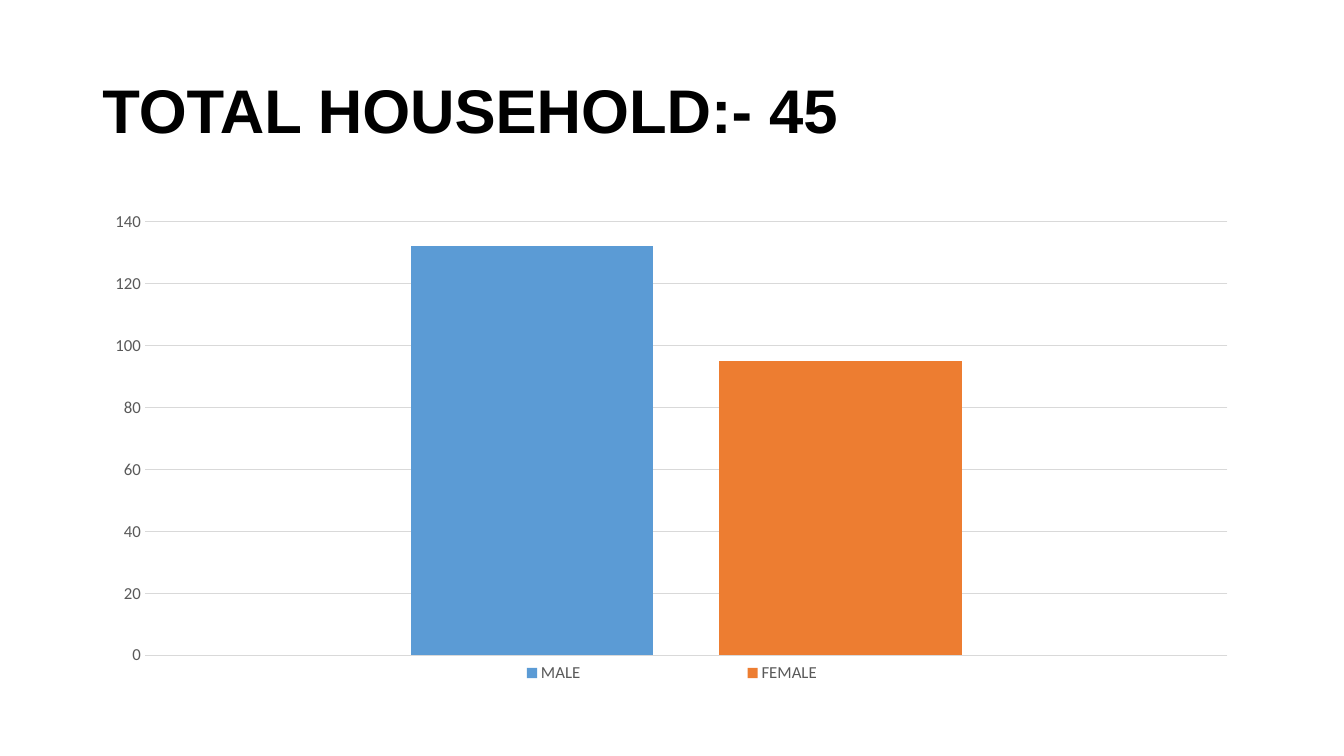
import lxml.etree
import pptx
import pptx.chart.data
import pptx.dml.color
import pptx.enum.chart
import pptx.enum.text
import pptx.oxml
import pptx.oxml.ns
import pptx.util

EMU_PER_PX = 9525
SLIDE_WIDTH, SLIDE_HEIGHT = 1280, 720
MARGIN = 88
CONTENT_WIDTH = SLIDE_WIDTH - 2 * MARGIN
CHART_TOP, CHART_HEIGHT = 192, 486
PLOT_BOX = (50, 19, 1031, 413)
LEGEND_BOX = (260, 434, 584, 30)

BLACK = pptx.dml.color.RGBColor(0x00, 0x00, 0x00)
LABEL_GREY = pptx.dml.color.RGBColor(0x59, 0x59, 0x59)
GRID_GREY = pptx.dml.color.RGBColor(0xD9, 0xD9, 0xD9)
BLUE = pptx.dml.color.RGBColor(0x5B, 0x9B, 0xD5)
ORANGE = pptx.dml.color.RGBColor(0xED, 0x7D, 0x31)
GREY = pptx.dml.color.RGBColor(0xA5, 0xA5, 0xA5)

HOUSEHOLD_MEMBERS = [
    ("MALE", [132], BLUE),
    ("FEMALE", [95], ORANGE),
    ("Series 3", [], GREY),
]


def px(length):
    return pptx.util.Emu(length * EMU_PER_PX)


def style_font(font, name, size, color, bold=False):
    font.name = name
    font.size = pptx.util.Pt(size)
    font.color.rgb = color
    font.bold = bold


def add_title(slide, wording, top, height):
    title = slide.shapes.add_textbox(px(MARGIN), px(top), px(CONTENT_WIDTH), px(height))
    frame = title.text_frame
    frame.word_wrap = True
    frame.vertical_anchor = pptx.enum.text.MSO_ANCHOR.MIDDLE
    frame.text = wording
    heading = frame.paragraphs[0]
    heading.line_spacing = 0.9
    style_font(heading.runs[0].font, "Arial", 44, BLACK, bold=True)


def add_value(parent, tag, value):
    lxml.etree.SubElement(parent, pptx.oxml.ns.qn(tag)).set("val", str(value))


def place_in_chart(part, box, inner=False):
    for previous in part.findall(pptx.oxml.ns.qn("c:layout")):
        part.remove(previous)
    layout = pptx.oxml.parse_xml(
        f'<c:layout {pptx.oxml.ns.nsdecls("c")}><c:manualLayout/></c:layout>'
    )
    manual = layout[0]
    if inner:
        add_value(manual, "c:layoutTarget", "inner")
    add_value(manual, "c:xMode", "edge")
    add_value(manual, "c:yMode", "edge")
    extents = (CONTENT_WIDTH, CHART_HEIGHT) * 2
    for side, length, extent in zip("xywh", box, extents):
        add_value(manual, f"c:{side}", length / extent)
    return layout


def style_axes(chart):
    chart.category_axis.visible = False
    count_axis = chart.value_axis
    count_axis.minimum_scale = 0
    count_axis.maximum_scale = 140
    count_axis.major_unit = 20
    count_axis.major_tick_mark = pptx.enum.chart.XL_TICK_MARK.NONE
    count_axis.minor_tick_mark = pptx.enum.chart.XL_TICK_MARK.NONE
    count_axis.format.line.fill.background()
    style_font(count_axis.tick_labels.font, "Calibri", 12, LABEL_GREY)
    gridline = count_axis.major_gridlines.format.line
    gridline.color.rgb = GRID_GREY
    gridline.width = pptx.util.Pt(0.75)


def add_legend(chart, members):
    chart.has_legend = True
    legend = chart.legend
    legend.position = pptx.enum.chart.XL_LEGEND_POSITION.BOTTOM
    legend.include_in_layout = False
    style_font(legend.font, "Calibri", 12, LABEL_GREY)
    layout = place_in_chart(legend._element, LEGEND_BOX)
    position = legend._element.find(pptx.oxml.ns.qn("c:legendPos"))
    position.addnext(layout)
    for index, (_, counts, _) in enumerate(members):
        if not counts:
            entry = lxml.etree.Element(pptx.oxml.ns.qn("c:legendEntry"))
            add_value(entry, "c:idx", index)
            add_value(entry, "c:delete", 1)
            layout.addprevious(entry)


def add_column_chart(slide, members):
    household = pptx.chart.data.CategoryChartData()
    household.categories = ["1"]
    for name, counts, _ in members:
        household.add_series(name, counts)
    chart = slide.shapes.add_chart(
        pptx.enum.chart.XL_CHART_TYPE.COLUMN_CLUSTERED,
        px(MARGIN), px(CHART_TOP), px(CONTENT_WIDTH), px(CHART_HEIGHT), household,
    ).chart
    chart.has_title = False
    style_font(chart.font, "Calibri", 10, BLACK)
    style_axes(chart)

    columns = chart.plots[0]
    columns.gap_width = 219
    columns.overlap = -27
    columns.vary_by_categories = False
    for series, (_, _, color) in zip(columns.series, members):
        series.format.fill.solid()
        series.format.fill.fore_color.rgb = color

    plot_area = chart._chartSpace.chart.plotArea
    plot_area.insert(0, place_in_chart(plot_area, PLOT_BOX, inner=True))
    add_legend(chart, members)


def main():
    presentation = pptx.Presentation()
    presentation.slide_width = px(SLIDE_WIDTH)
    presentation.slide_height = px(SLIDE_HEIGHT)
    slide = presentation.slides.add_slide(presentation.slide_layouts[6])
    add_title(slide, "TOTAL HOUSEHOLD:- 45", 38, 140)
    add_column_chart(slide, HOUSEHOLD_MEMBERS)
    presentation.save("out.pptx")


if __name__ == "__main__":
    main()
